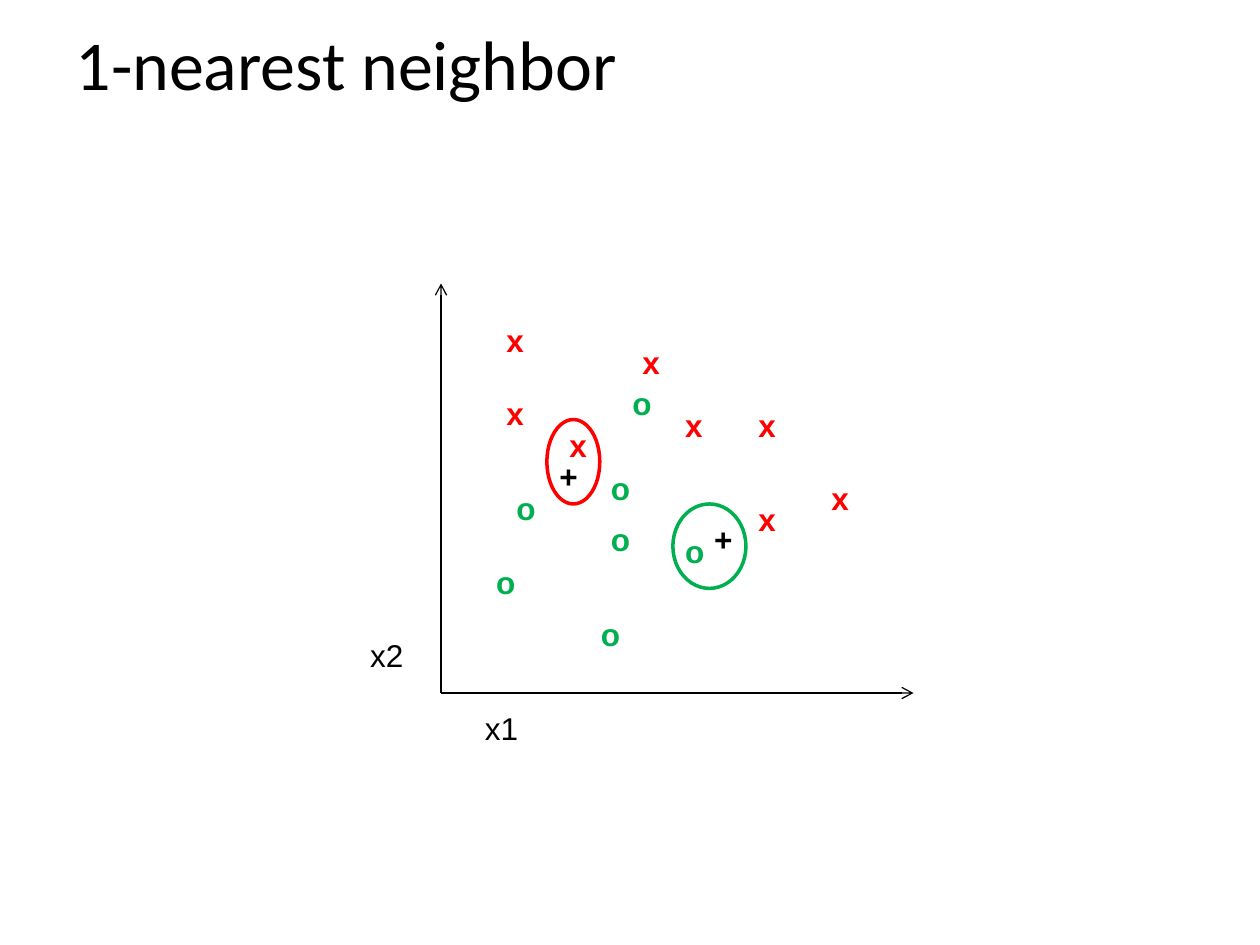
from dataclasses import dataclass

import pptx
import pptx.dml.color
import pptx.enum.shapes
import pptx.enum.text
import pptx.oxml
import pptx.oxml.ns
import pptx.util
from pptx.util import Inches

BLACK, RED, GREEN = "000000", "FF0000", "00B050"


@dataclass(frozen=True)
class Label:
    text: str
    left: float
    top: float
    width: float
    color: str = BLACK
    bold: bool = True


@dataclass(frozen=True)
class Ring:
    left: float
    top: float
    width: float
    height: float
    color: str


CROSS_POSITIONS = [(5.34, 3.17), (5.92, 3.17), (5.92, 3.92), (6.5, 3.75),
                   (3.92, 2.5), (3.92, 3.08), (5, 2.67), (4.42, 3.33)]
CIRCLE_POSITIONS = [(4.92, 3), (5.34, 4.17), (3.84, 4.42), (4, 3.83),
                    (4.67, 4.83), (4.75, 4.08), (4.75, 3.67)]
QUERY_POSITIONS = [(4.34, 3.58), (5.57, 4.08)]

LABELS = (
    [Label("x", left, top, 0.34, RED) for left, top in CROSS_POSITIONS]
    + [Label("o", left, top, 0.36, GREEN) for left, top in CIRCLE_POSITIONS]
    + [Label("x2", 2.84, 5, 0.47, bold=False),
       Label("x1", 3.75, 5.58, 0.47, bold=False)]
    + [Label("+", left, top, 0.35) for left, top in QUERY_POSITIONS]
)
RINGS = [Ring(4.34, 3.33, 0.42, 0.67, RED), Ring(5.34, 4, 0.58, 0.67, GREEN)]
ORIGIN = (3.5, 5.5)
AXIS_ENDS = [(3.5, 2.25), (7.25, 5.5)]


def rgb(color: str) -> pptx.dml.color.RGBColor:
    return pptx.dml.color.RGBColor.from_string(color)


def add_span(para, text: str, font: str, size: float, color: str, bold: bool = False) -> None:
    span = para.add_run()
    span.text = text
    span.font.name = font
    span.font.size = pptx.util.Pt(size)
    span.font.bold = bold
    span.font.color.rgb = rgb(color)


def set_title(page, text: str) -> None:
    title = page.shapes.title
    title.left, title.top = Inches(0.5), Inches(0)
    title.width, title.height = Inches(9), Inches(1)
    title.text_frame.vertical_anchor = pptx.enum.text.MSO_ANCHOR.MIDDLE
    para = title.text_frame.paragraphs[0]
    para.alignment = pptx.enum.text.PP_ALIGN.LEFT
    add_span(para, text, "Calibri", 40, BLACK)


def add_label(page, label: Label) -> None:
    box = page.shapes.add_textbox(Inches(label.left), Inches(label.top),
                                  Inches(label.width), Inches(0.4))
    box.text_frame.word_wrap = False
    box.text_frame.auto_size = pptx.enum.text.MSO_AUTO_SIZE.SHAPE_TO_FIT_TEXT
    add_span(box.text_frame.paragraphs[0], label.text, "Arial", 18, label.color, label.bold)


def add_axis(page, end: tuple[float, float]) -> None:
    """Draw an arrow from the origin to the given end."""
    axis = page.shapes.add_connector(pptx.enum.shapes.MSO_CONNECTOR.STRAIGHT,
                                     *map(Inches, ORIGIN + end))
    axis.line.color.rgb = rgb(BLACK)
    axis.line.width = pptx.util.Pt(0.75)
    arrowhead = pptx.oxml.parse_xml(
        f'<a:tailEnd {pptx.oxml.ns.nsdecls("a")} type="arrow"/>')
    axis.line._get_or_add_ln().append(arrowhead)
    properties = axis._element.spPr
    properties.append(pptx.oxml.parse_xml(f'<a:effectLst {pptx.oxml.ns.nsdecls("a")}/>'))


def add_ring(page, ring: Ring) -> None:
    oval = page.shapes.add_shape(pptx.enum.shapes.MSO_SHAPE.OVAL,
                                 Inches(ring.left), Inches(ring.top),
                                 Inches(ring.width), Inches(ring.height))
    oval.shadow.inherit = False
    oval.fill.background()
    oval.line.color.rgb = rgb(ring.color)
    oval.line.width = pptx.util.Pt(2)


def main() -> None:
    deck = pptx.Presentation()
    deck.slide_width, deck.slide_height = Inches(10), Inches(7.5)
    page = deck.slides.add_slide(deck.slide_layouts.get_by_name("Title Only"))
    set_title(page, "1-nearest neighbor")
    for end in AXIS_ENDS:
        add_axis(page, end)
    for label in LABELS:
        add_label(page, label)
    for ring in RINGS:
        add_ring(page, ring)
    deck.save("out.pptx")


if __name__ == "__main__":
    main()
